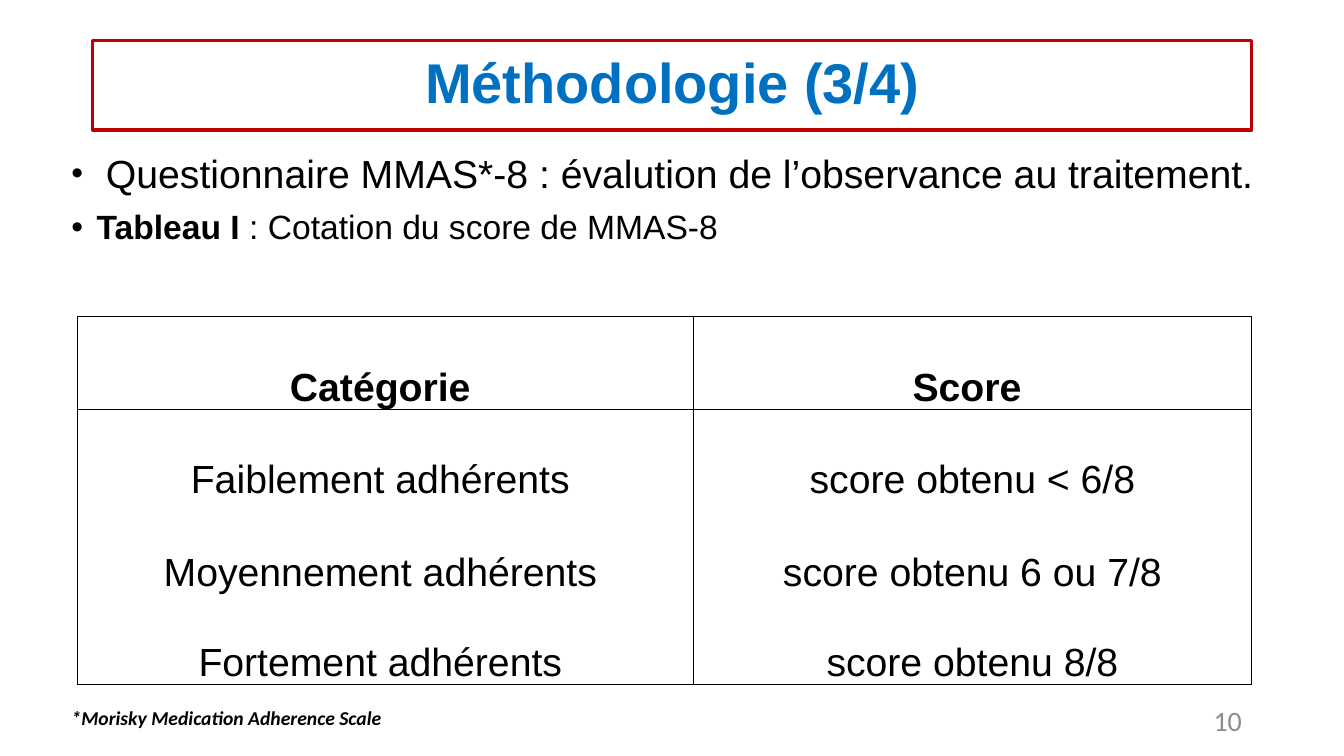
from dataclasses import dataclass

from lxml.etree import SubElement
from pptx import Presentation
from pptx.dml.color import RGBColor
from pptx.enum.text import MSO_ANCHOR as Anchor, MSO_AUTO_SIZE as AutoSize, PP_ALIGN as Align
from pptx.oxml.ns import qn
from pptx.util import Emu, Inches, Pt

COLORS = {
    "ink": "000000",
    "paper": "FFFFFF",
    "title": "0070C0",
    "frame": "C00000",
    "number": "8C8C8C",
}
SLIDE_WIDTH, SLIDE_HEIGHT = Inches(13.33), Inches(7.5)


@dataclass(frozen=True)
class Area:
    left: float
    top: float
    width: float
    height: float

    def box(self) -> tuple[Emu, Emu, Emu, Emu]:
        return across(self.left), down(self.top), across(self.width), down(self.height)


@dataclass(frozen=True)
class Run:
    text: str
    size: int = 28
    bold: bool = False


@dataclass(frozen=True)
class Category:
    name: str
    score: str


TITLE_AREA = Area(6.9, 5.33, 86.25, 11.87)
BODY_AREA = Area(4.58, 19.73, 92.48, 23.73)
NUMBER_AREA = Area(70.65, 92.67, 22.5, 5.33)
NOTE_AREA = Area(4.58, 92.67, 43.2, 4.53)
COLUMN_SHARES = (45.83, 41.48)
ROW_SHARES = (12.27, 12.27, 12.27, 11.87)
TABLE_AREA = Area(5.78, 41.87, sum(COLUMN_SHARES), sum(ROW_SHARES))

BULLETS = (
    (Run(" ", 24), Run("Questionnaire MMAS*-8 : évalution de l’observance au traitement.")),
    (Run("Tableau I ", 24, True), Run(": Cotation du score de MMAS-8", 24)),
)
CATEGORIES = (
    Category("Catégorie ", "Score "),
    Category("Faiblement adhérents ", "score obtenu < 6/8"),
    Category("Moyennement adhérents ", "score obtenu 6 ou 7/8"),
    Category("Fortement adhérents ", "score obtenu 8/8"),
)


def across(percent: float) -> Emu:
    return Emu(round(SLIDE_WIDTH * percent / 100))


def down(percent: float) -> Emu:
    return Emu(round(SLIDE_HEIGHT * percent / 100))


def color(name: str) -> RGBColor:
    return RGBColor.from_string(COLORS[name])


def add_text(paragraph, text: str, *, size: int = 28, font: str = "Arial", ink: str = "ink",
             bold: bool = False, italic: bool = False, align=Align.LEFT) -> None:
    paragraph.alignment = align
    run = paragraph.add_run()
    run.text = text
    run.font.name = font
    run.font.size = Pt(size)
    run.font.bold = bold
    run.font.italic = italic
    run.font.color.rgb = color(ink)


def add_frame(slide, area: Area, anchor=Anchor.TOP):
    frame = slide.shapes.add_textbox(*area.box()).text_frame
    frame.word_wrap = True
    frame.vertical_anchor = anchor
    return frame


def draw_title(slide) -> None:
    title = slide.shapes.title
    title.left, title.top, title.width, title.height = TITLE_AREA.box()
    title.line.color.rgb = color("frame")
    title.line.width = Pt(2.25)
    frame = title.text_frame
    frame.auto_size = AutoSize.NONE
    frame.word_wrap = True
    frame.vertical_anchor = Anchor.MIDDLE
    paragraph = frame.paragraphs[0]
    paragraph.line_spacing = 0.9
    add_text(paragraph, "Méthodologie (3/4)", size=40, ink="title", bold=True, align=Align.CENTER)


def draw_bullets(slide) -> None:
    frame = add_frame(slide, BODY_AREA)
    for index, runs in enumerate(BULLETS):
        paragraph = frame.add_paragraph() if index else frame.paragraphs[0]
        paragraph.line_spacing = 0.9
        paragraph.space_before = Pt(10)
        for run in runs:
            add_text(paragraph, run.text, size=run.size, bold=run.bold)
        properties = paragraph._p.get_or_add_pPr()
        properties.set("marL", str(Inches(0.25)))
        properties.set("indent", str(Inches(-0.25)))
        SubElement(properties, qn("a:buFont"), typeface="Arial")
        SubElement(properties, qn("a:buChar"), char="•")


def set_borders(cell, sides: str) -> None:
    properties = cell._tc.get_or_add_tcPr()
    for side in "LRTB":
        line = SubElement(properties, qn(f"a:ln{side}"), w=str(Pt(1)))
        if side in sides:
            fill = SubElement(line, qn("a:solidFill"))
            SubElement(fill, qn("a:srgbClr"), val=COLORS["ink"])
        else:
            SubElement(line, qn("a:noFill"))


def draw_table(slide) -> None:
    last = len(CATEGORIES) - 1
    table = slide.shapes.add_table(len(CATEGORIES), len(COLUMN_SHARES), *TABLE_AREA.box()).table
    table.first_row = table.horz_banding = False
    for column, share in zip(table.columns, COLUMN_SHARES):
        column.width = across(share)
    for index, (row, share, category) in enumerate(zip(table.rows, ROW_SHARES, CATEGORIES)):
        row.height = down(share)
        sides = "LR" + ("T" if index < 2 else "") + ("B" if index in (0, last) else "")
        for cell, text in zip(row.cells, (category.name, category.score)):
            cell.margin_left = cell.margin_right = cell.margin_top = Inches(0.01)
            cell.margin_bottom = 0
            cell.vertical_anchor = Anchor.BOTTOM
            set_borders(cell, sides)
            cell.fill.solid()
            cell.fill.fore_color.rgb = color("paper")
            add_text(cell.text_frame.paragraphs[0], text, bold=index == 0, align=Align.CENTER)


def draw_footer(slide) -> None:
    number = add_frame(slide, NUMBER_AREA, Anchor.MIDDLE)
    add_text(number.paragraphs[0], "10", size=20, font="Calibri", ink="number", align=Align.RIGHT)
    note = add_frame(slide, NOTE_AREA)
    add_text(note.paragraphs[0], "*Morisky Medication Adherence Scale", size=14,
             font="Calibri", bold=True, italic=True)


def main() -> None:
    presentation = Presentation()
    presentation.slide_width, presentation.slide_height = SLIDE_WIDTH, SLIDE_HEIGHT
    slide = presentation.slides.add_slide(presentation.slide_layouts[5])
    draw_title(slide)
    draw_bullets(slide)
    draw_table(slide)
    draw_footer(slide)
    presentation.save("out.pptx")


if __name__ == "__main__":
    main()
